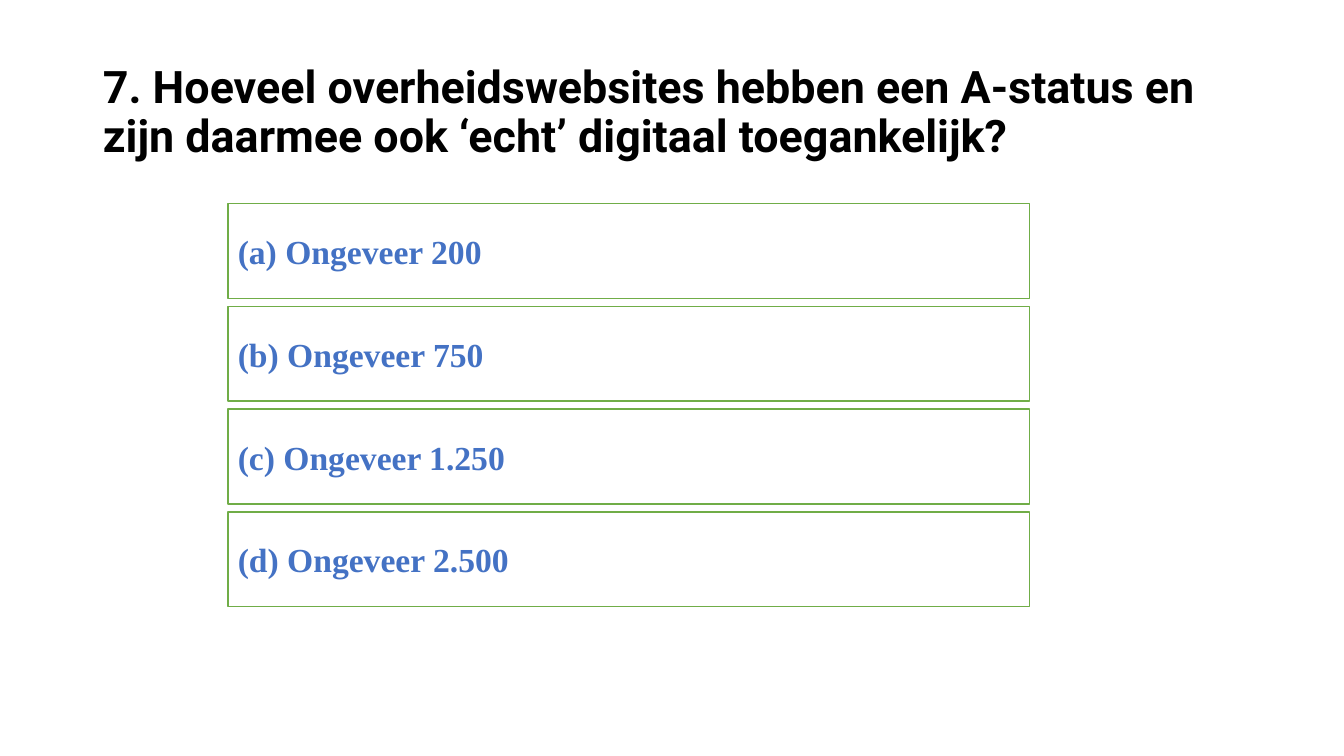
from dataclasses import dataclass

from pptx import Presentation
from pptx.dml.color import RGBColor
from pptx.enum.shapes import MSO_SHAPE
from pptx.enum.text import MSO_ANCHOR, MSO_AUTO_SIZE, PP_ALIGN
from pptx.util import Inches, Pt

RECT = MSO_SHAPE.RECTANGLE
MIDDLE = MSO_ANCHOR.MIDDLE
NO_FIT = MSO_AUTO_SIZE.NONE
LEFT = PP_ALIGN.LEFT
TITLE_ONLY = 5


@dataclass(frozen=True)
class Theme:
    black: RGBColor = RGBColor(0x00, 0x00, 0x00)
    white: RGBColor = RGBColor(0xFF, 0xFF, 0xFF)
    green: RGBColor = RGBColor(0x70, 0xAD, 0x47)
    blue: RGBColor = RGBColor(0x44, 0x72, 0xC4)
    title_font: str = "Roboto"
    answer_font: str = "Times New Roman"
    title_size: Pt = Pt(32)
    answer_size: Pt = Pt(24)
    border: Pt = Pt(1)


THEME = Theme()
QUESTION = (
    "7. Hoeveel overheidswebsites hebben een A-status en "
    "zijn daarmee ook ‘echt’ digitaal toegankelijk?"
)
ANSWERS = (
    "(a) Ongeveer 200",
    "(b) Ongeveer 750",
    "(c) Ongeveer 1.250",
    "(d) Ongeveer 2.500",
)
FIRST_TOP, STEP = 2.02, 1.02


def set_text(shape, text, font, size, color):
    """Write one bold, left-aligned, vertically centred paragraph."""
    frame = shape.text_frame
    frame.text = text
    frame.word_wrap = True
    frame.auto_size = NO_FIT
    frame.vertical_anchor = MIDDLE
    para = frame.paragraphs[0]
    para.alignment = LEFT
    para.font.name = font
    para.font.size = size
    para.font.bold = True
    para.font.color.rgb = color
    return para


def set_title(slide, text):
    title = slide.shapes.title
    title.left, title.top = Inches(0.92), Inches(0.4)
    title.width, title.height = Inches(11.5), Inches(1.45)
    para = set_text(title, text, THEME.title_font, THEME.title_size, THEME.black)
    para.line_spacing = 0.9


def add_answer(slide, text, top):
    box = slide.shapes.add_shape(
        RECT, Inches(2.26), Inches(top), Inches(7.95), Inches(0.94)
    )
    box.shadow.inherit = False
    box.fill.solid()
    box.fill.fore_color.rgb = THEME.white
    box.line.color.rgb = THEME.green
    box.line.width = THEME.border
    set_text(box, text, THEME.answer_font, THEME.answer_size, THEME.blue)


def main():
    deck = Presentation()
    deck.slide_width, deck.slide_height = Inches(13.33), Inches(7.5)
    slide = deck.slides.add_slide(deck.slide_layouts[TITLE_ONLY])
    set_title(slide, QUESTION)
    for row, text in enumerate(ANSWERS):
        add_answer(slide, text, FIRST_TOP + row * STEP)
    deck.save("out.pptx")


if __name__ == "__main__":
    main()
